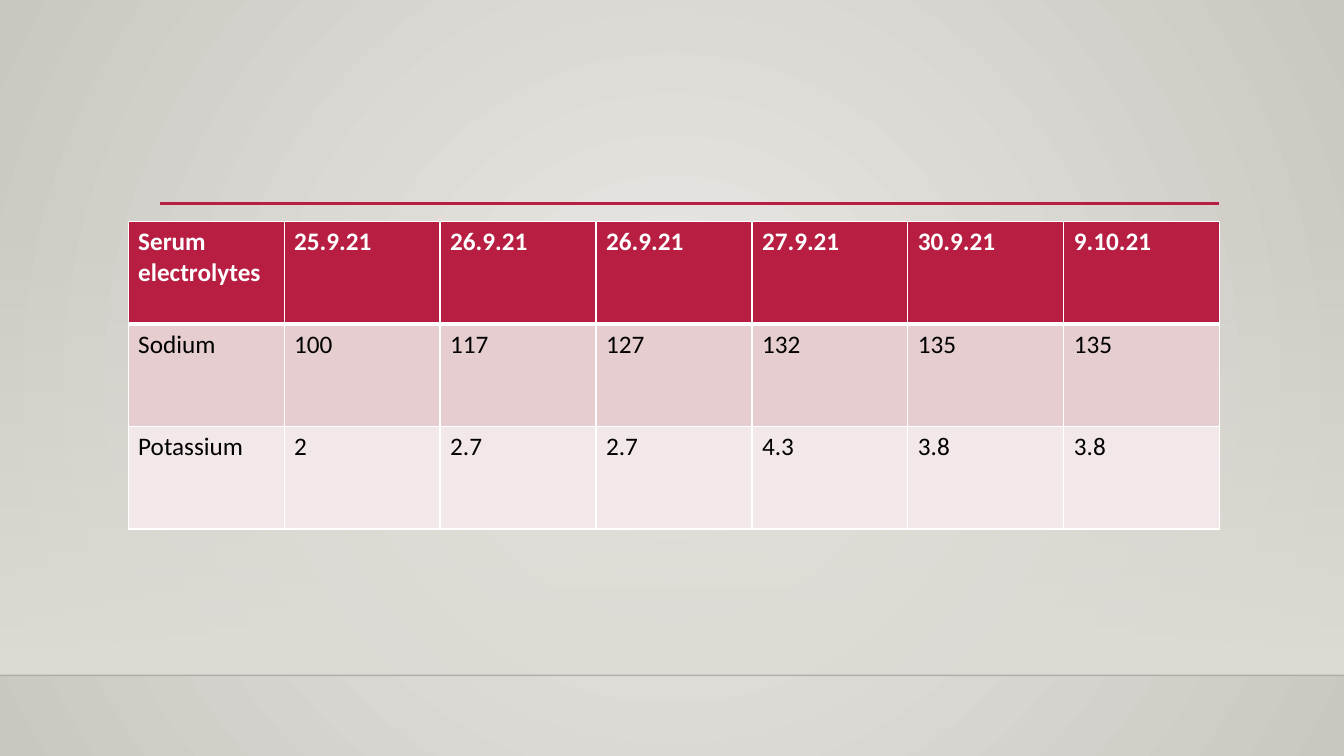
import pptx
import pptx.util
import pptx.dml.color
import pptx.enum.shapes
import pptx.oxml
import pptx.oxml.ns

Cm, Pt = pptx.util.Cm, pptx.util.Pt
qn = pptx.oxml.ns.qn
NS = pptx.oxml.ns.nsdecls("a")
WIDE, HIGH = 33.87, 19.05
FLOOR = 17.02

HUES = {
    "red": "B71E42", "pink": "E6CDCF", "pale": "F3E8E9",
    "white": "FFFFFF", "black": "000000", "edge": "000001",
    "light": "ECEAE7", "dark": "CAC7C1", "wall": "DFDBD5",
}
ROWS = [
    ["Serum electrolytes", "25.9.21", "26.9.21", "26.9.21", "27.9.21", "30.9.21", "9.10.21"],
    ["Sodium", "100", "117", "127", "132", "135", "135"],
    ["Potassium", "2", "2.7", "2.7", "4.3", "3.8", "3.8"],
]
FILLS = ["red", "pink", "pale"]


def rgb(name):
    return pptx.dml.color.RGBColor.from_string(HUES[name])


def blend(props, stops, shade):
    """Swap the solid fill in props for a gradient of (place, hue, opacity) stops."""
    marks = "".join(
        f'<a:gs pos="{pos * 1000}"><a:srgbClr val="{HUES[hue]}">'
        f'<a:alpha val="{alpha * 1000}"/></a:srgbClr></a:gs>'
        for pos, hue, alpha in stops)
    grad = pptx.oxml.parse_xml(
        f'<a:gradFill {NS} rotWithShape="1"><a:gsLst>{marks}</a:gsLst>{shade}</a:gradFill>')
    props.replace(props.find(qn("a:solidFill")), grad)


def add_back(slide):
    slide.background.fill.solid()
    props = slide.element.find(".//" + qn("p:bgPr"))
    blend(props, [(0, "light", 100), (100, "dark", 100)],
          '<a:path path="circle"><a:fillToRect l="50000" t="50000" r="50000" b="50000"/></a:path>')


def add_wall(slide):
    top = 5.61
    wall = slide.shapes.add_shape(pptx.enum.shapes.MSO_SHAPE.RECTANGLE,
                                  0, Cm(top), Cm(WIDE), Cm(FLOOR - top))
    wall.shadow.inherit = False
    wall.line.fill.background()
    wall.fill.solid()
    blend(wall.element.spPr, [(0, "wall", 0), (100, "wall", 100)],
          '<a:lin ang="5400000" scaled="0"/>')


def add_rule(slide, left, right, top, hue, width, alpha=100):
    rule = slide.shapes.add_connector(pptx.enum.shapes.MSO_CONNECTOR.STRAIGHT,
                                      Cm(left), Cm(top), Cm(right), Cm(top))
    rule.line.color.rgb = rgb(hue)
    rule.line.width = Pt(width)
    props = rule.element.spPr
    if alpha < 100:
        props.find(".//" + qn("a:srgbClr")).append(
            pptx.oxml.parse_xml(f'<a:alpha {NS} val="{alpha * 1000}"/>'))
    props.append(pptx.oxml.parse_xml(f"<a:effectLst {NS}/>"))


def edge(cell, top, bottom):
    """Draw white borders, with the top and bottom widths in points."""
    props = cell._tc.get_or_add_tcPr()
    for spot, (side, width) in enumerate(zip("LRTB", (1, 1, top, bottom))):
        props.insert(spot, pptx.oxml.parse_xml(
            f'<a:ln{side} {NS} w="{Pt(width)}"><a:solidFill>'
            f'<a:srgbClr val="{HUES["white"]}"/></a:solidFill></a:ln{side}>'))


def add_grid(slide):
    wide, high = 3.93, 2.58
    count = len(ROWS[0])
    grid = slide.shapes.add_table(len(ROWS), count, Cm(3.23), Cm(5.59),
                                  Cm(wide * count), Cm(high * len(ROWS))).table
    for col in grid.columns:
        col.width = Cm(wide)
    for r, (words, hue) in enumerate(zip(ROWS, FILLS)):
        grid.rows[r].height = Cm(high)
        head = r == 0
        for c, word in enumerate(words):
            cell = grid.cell(r, c)
            cell.text = word
            cell.fill.solid()
            cell.fill.fore_color.rgb = rgb(hue)
            edge(cell, 3 if r == 1 else 1, 3 if head else 1)
            font = cell.text_frame.paragraphs[0].font
            font.name, font.size, font.bold = "Calibri", Pt(18), head
            font.color.rgb = rgb("white" if head else "black")


def main():
    deck = pptx.Presentation()
    deck.slide_width, deck.slide_height = Cm(WIDE), Cm(HIGH)
    slide = deck.slides.add_slide(deck.slide_layouts[6])
    add_back(slide)
    add_wall(slide)
    add_rule(slide, 0, WIDE, FLOOR, "edge", 1, 20)
    add_rule(slide, 4.04, 30.73, 5.13, "red", 2.5)
    add_grid(slide)
    deck.save("out.pptx")


if __name__ == "__main__":
    main()
